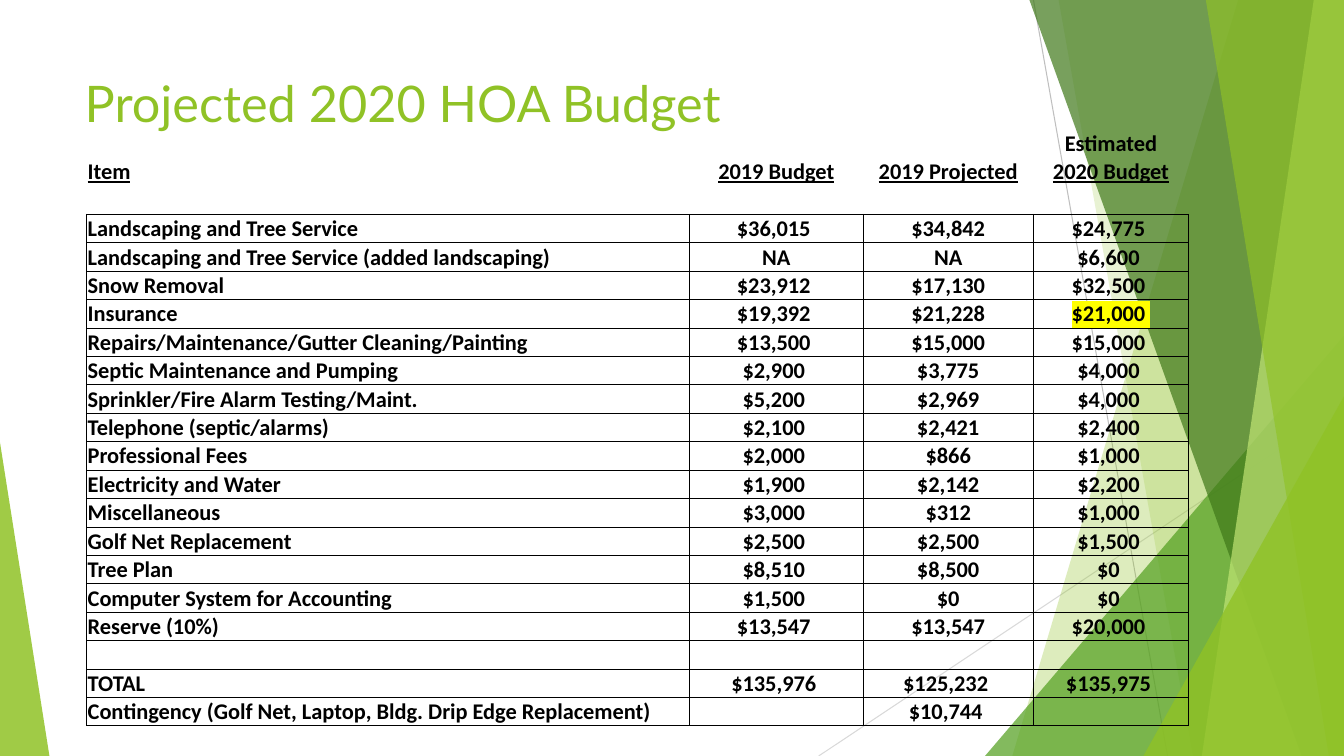
from lxml import etree
from pptx import Presentation
from pptx.dml.color import RGBColor
from pptx.enum import shapes as kinds, text
from pptx.oxml.ns import qn
from pptx.util import Pt

PX = 9144  # 100 px to the inch
WIDE, HIGH = 1333, 750
PLAIN = "{2D5ABB26-0587-4C30-8999-92F81FD0307C}"

TITLE = "Projected 2020 HOA Budget"
COLS = [598, 172, 169, 154]
ROW = 28
HEADS = [
    ("", "", "", "Estimated"),
    ("Item", "2019 Budget", "2019 Projected", "2020 Budget"),
    ("", "", "", ""),
]
ITEMS = [
    ("Landscaping and Tree Service", "$36,015 ", "$34,842", "$24,775 "),
    ("Landscaping and Tree Service (added landscaping)", "NA", "NA", "$6,600 "),
    ("Snow Removal", "$23,912 ", "$17,130", "$32,500 "),
    ("Insurance", "$19,392 ", "$21,228", "$21,000 "),
    ("Repairs/Maintenance/Gutter Cleaning/Painting", "$13,500 ", "$15,000", "$15,000 "),
    ("Septic Maintenance and Pumping", "$2,900 ", "$3,775", "$4,000 "),
    ("Sprinkler/Fire Alarm Testing/Maint.", "$5,200 ", "$2,969", "$4,000 "),
    ("Telephone (septic/alarms)", "$2,100 ", "$2,421", "$2,400 "),
    ("Professional Fees", "$2,000 ", "$866", "$1,000 "),
    ("Electricity and Water", "$1,900 ", "$2,142", "$2,200 "),
    ("Miscellaneous", "$3,000 ", "$312", "$1,000 "),
    ("Golf Net Replacement", "$2,500 ", "$2,500", "$1,500 "),
    ("Tree Plan", "$8,510 ", "$8,500", "$0 "),
    ("Computer System for Accounting", "$1,500 ", "$0", "$0 "),
    ("Reserve (10%)", "$13,547 ", "$13,547", "$20,000 "),
    ("", "", "", ""),
    ("TOTAL", "$135,976 ", "$125,232 ", "$135,975 "),
    ("Contingency (Golf Net, Laptop, Bldg. Drip Edge Replacement)", "", "$10,744 ", ""),
]
MARKED = ("Insurance", 3)

RAYS = [((1025, 0), (1158, 750), "BFBFBF"), ((1333, 403), (812, 750), "D9D9D9")]
# Bands reach the right edge: top left x, bottom left x, colour, opacity.
# Triangles: left, top, width, height, apex, colour, opacity.
DECOR = [
    (1228, 1004, "90C226", 30),
    (1050, 1183, "90C226", 20),
    (977, 333, 356, 417, 1, "54A021", 72),
    (1021, 1291, "3F7819", 70),
    (1303, 1192, "C0E474", 70),
    (1196, 1318, "90C226", 65),
    (1134, 393, 199, 357, 1, "90C226", 80),
    (0, 439, 49, 311, 0, "90C226", 85),
]


def rgb(code):
    return RGBColor.from_string(code)


def sub(node, tag, **attrs):
    return etree.SubElement(node, qn(tag), **attrs)


def tint(shape, code, alpha):
    shape.shadow.inherit = False
    shape.fill.solid()
    shape.fill.fore_color.rgb = rgb(code)
    shape.line.fill.background()
    color = shape._element.spPr.find(qn("a:solidFill"))[0]
    sub(color, "a:alpha", val=str(alpha * 1000))


def draw_decor(shapes):
    for start, end, code in RAYS:
        ray = shapes.add_connector(
            kinds.MSO_CONNECTOR.STRAIGHT, *(v * PX for v in start + end))
        ray.line.color.rgb = rgb(code)
        ray.line.width = Pt(0.75)
        sub(ray._element.spPr, "a:effectLst")
    for *form, code, alpha in DECOR:
        if len(form) == 2:
            top, base = form
            path = shapes.build_freeform(top, 0, scale=PX)
            path.add_line_segments([(WIDE, 0), (WIDE, HIGH), (base, HIGH)])
            shape = path.convert_to_shape()
        else:
            *box, apex = form
            shape = shapes.add_shape(
                kinds.MSO_SHAPE.ISOSCELES_TRIANGLE, *(v * PX for v in box))
            shape.adjustments[0] = apex
        tint(shape, code, alpha)


def put_title(shapes):
    title = shapes.title
    shapes._spTree.append(title._element)
    title.left, title.top, title.width, title.height = (
        v * PX for v in (74, 67, 1054, 144))
    frame = title.text_frame
    frame.vertical_anchor = text.MSO_ANCHOR.TOP
    para = frame.paragraphs[0]
    para.alignment = text.PP_ALIGN.LEFT
    run = para.add_run()
    run.text = TITLE
    run.font.size = Pt(36)
    run.font.name = "Lato"
    run.font.color.rgb = rgb("90C226")


def edge(cell, sides):
    """Draw thin black borders on the given sides and none on the others."""
    props = cell._tc.get_or_add_tcPr()
    for side in "LRTB":
        line = sub(props, "a:ln" + side, w="6350")
        if side in sides:
            sub(sub(line, "a:solidFill"), "a:srgbClr", val="000000")
        else:
            sub(line, "a:noFill")


def fill_cell(cell, words, col, head, marked):
    cell.margin_left = cell.margin_right = cell.margin_top = PX
    cell.margin_bottom = 0
    cell.vertical_anchor = text.MSO_ANCHOR.MIDDLE
    para = cell.text_frame.paragraphs[0]
    para.alignment = text.PP_ALIGN.CENTER if col else text.PP_ALIGN.LEFT
    if not words:
        sub(para._p, "a:endParaRPr", sz="1600")
        return
    run = para.add_run()
    run.text = words
    font = run.font
    font.size, font.bold = Pt(16), True
    font.underline = head and words != "Estimated"
    font.color.rgb = rgb("000000")
    if marked:
        sub(sub(run._r.rPr, "a:highlight"), "a:srgbClr", val="FFFF00")
    font.name = "Calibri"


def add_budget(shapes):
    rows = HEADS + ITEMS
    table = shapes.add_table(
        len(rows), len(COLS), 86 * PX, 128 * PX,
        sum(COLS) * PX, len(rows) * ROW * PX).table
    table.first_row = table.horz_banding = False
    table._tbl.tblPr.find(qn("a:tableStyleId")).text = PLAIN
    for col, width in enumerate(COLS):
        table.columns[col].width = width * PX
    for i, row in enumerate(rows):
        table.rows[i].height = ROW * PX
        head = i < len(HEADS)
        last = i == len(HEADS) - 1
        for col, words in enumerate(row):
            cell = table.cell(i, col)
            edge(cell, "B" if last else "" if head else "LRTB")
            cell.fill.background()
            fill_cell(cell, words, col, head, (row[0], col) == MARKED)


def main():
    deck = Presentation()
    deck.slide_width, deck.slide_height = WIDE * PX, HIGH * PX
    shapes = deck.slides.add_slide(deck.slide_layouts[5]).shapes
    draw_decor(shapes)
    put_title(shapes)
    add_budget(shapes)
    deck.save("out.pptx")


if __name__ == "__main__":
    main()
